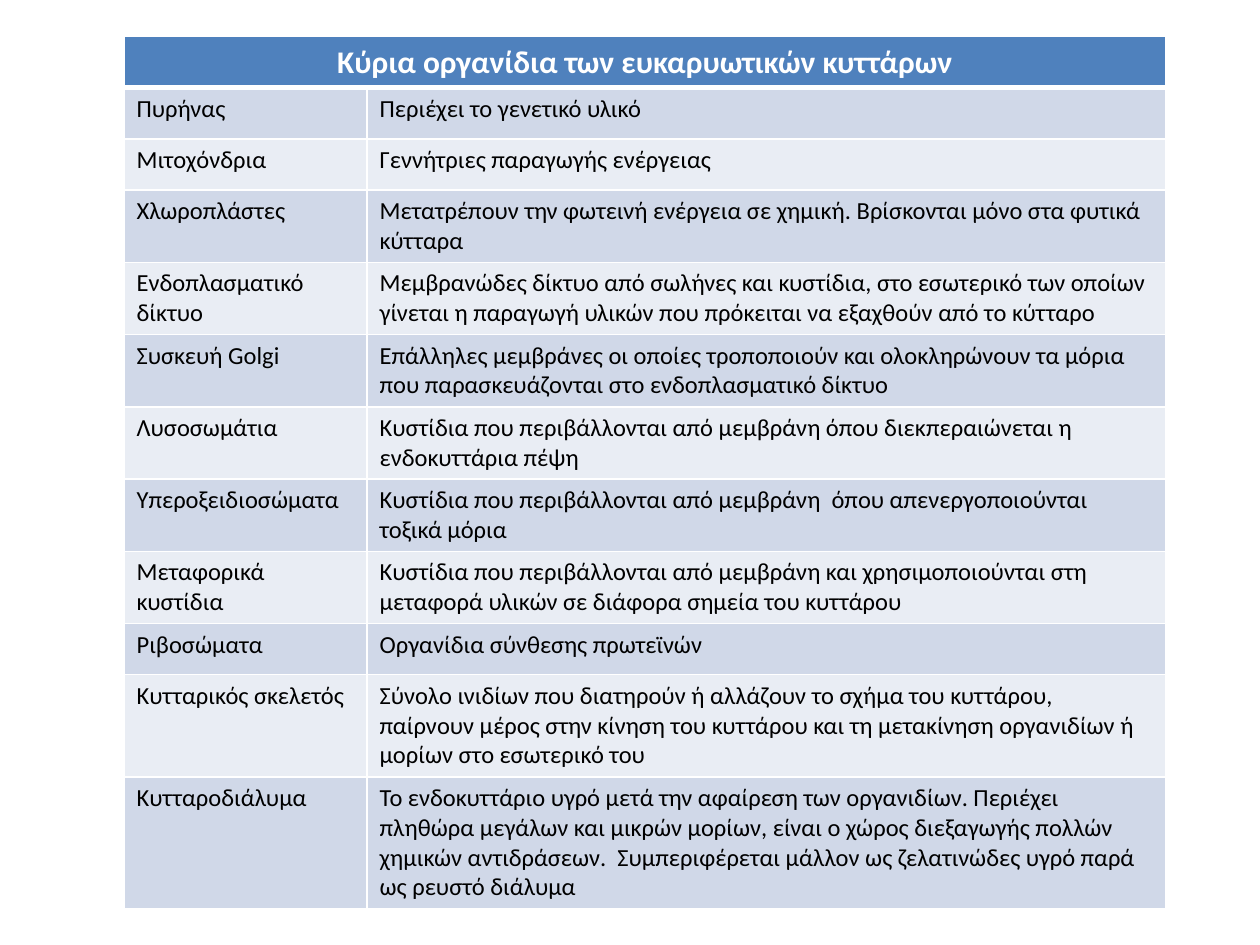
from dataclasses import dataclass

from lxml.etree import SubElement
from pptx import Presentation
from pptx.dml.color import RGBColor as Color
from pptx.enum.text import MSO_ANCHOR as Anchor, PP_ALIGN as Align
from pptx.oxml.ns import qn
from pptx.util import Cm, Pt


@dataclass(frozen=True)
class Theme:
    font: str = "Calibri"
    header_size: int = 18
    body_size: int = 14
    header_fill: str = "4F81BD"
    bands: tuple = ("D0D8E8", "E9EDF4")
    white: str = "FFFFFF"
    black: str = "000000"
    thin_line: int = 1
    thick_line: int = 3


THEME = Theme()
HEADING = "Κύρια οργανίδια των ευκαρυωτικών κυττάρων"
ORGANELLES = [
    ("Πυρήνας", "Περιέχει το γενετικό υλικό"),
    ("Μιτοχόνδρια", "Γεννήτριες παραγωγής ενέργειας"),
    ("Χλωροπλάστες",
     "Μετατρέπουν την φωτεινή ενέργεια σε χημική. Βρίσκονται μόνο στα φυτικά κύτταρα"),
    ("Ενδοπλασματικό δίκτυο",
     "Μεμβρανώδες δίκτυο από σωλήνες και κυστίδια, στο εσωτερικό των οποίων "
     "γίνεται η παραγωγή υλικών που πρόκειται να εξαχθούν από το κύτταρο"),
    ("Συσκευή Golgi",
     "Επάλληλες μεμβράνες οι οποίες τροποποιούν και ολοκληρώνουν τα μόρια "
     "που παρασκευάζονται στο ενδοπλασματικό δίκτυο"),
    ("Λυσοσωμάτια",
     "Κυστίδια που περιβάλλονται από μεμβράνη όπου διεκπεραιώνεται η ενδοκυττάρια πέψη"),
    ("Υπεροξειδιοσώματα",
     "Κυστίδια που περιβάλλονται από μεμβράνη  όπου απενεργοποιούνται τοξικά μόρια"),
    ("Μεταφορικά κυστίδια",
     "Κυστίδια που περιβάλλονται από μεμβράνη και χρησιμοποιούνται στη "
     "μεταφορά υλικών σε διάφορα σημεία του κυττάρου"),
    ("Ριβοσώματα", "Οργανίδια σύνθεσης πρωτεϊνών"),
    ("Κυτταρικός σκελετός",
     "Σύνολο ινιδίων που διατηρούν ή αλλάζουν το σχήμα του κυττάρου, "
     "παίρνουν μέρος στην κίνηση του κυττάρου και τη μετακίνηση οργανιδίων ή "
     "μορίων στο εσωτερικό του"),
    ("Κυτταροδιάλυμα",
     "Το ενδοκυττάριο υγρό μετά την αφαίρεση των οργανιδίων. Περιέχει "
     "πληθώρα μεγάλων και μικρών μορίων, είναι ο χώρος διεξαγωγής πολλών "
     "χημικών αντιδράσεων.  Συμπεριφέρεται μάλλον ως ζελατινώδες υγρό παρά "
     "ως ρευστό διάλυμα"),
]


def set_borders(cell, widths):
    properties = cell._tc.get_or_add_tcPr()
    for side in "LRTB":
        width = widths.get(side, THEME.thin_line)
        line = SubElement(properties, qn(f"a:ln{side}"), w=str(Pt(width)))
        fill = SubElement(line, qn("a:solidFill"))
        SubElement(fill, qn("a:srgbClr"), val=THEME.white)


def format_cell(cell, text, fill, color, size, bold=False, align=Align.LEFT, borders={}):
    set_borders(cell, borders)
    cell.fill.solid()
    cell.fill.fore_color.rgb = Color.from_string(fill)
    cell.vertical_anchor = Anchor.TOP
    cell.text = text
    paragraph = cell.text_frame.paragraphs[0]
    paragraph.alignment = align
    for run in paragraph.runs:
        for name, value in {"name": THEME.font, "size": Pt(size), "bold": bold}.items():
            setattr(run.font, name, value)
        run.font.color.rgb = Color.from_string(color)


def add_organelle_table(slide, left, top, width, row_height, name_share):
    row_count = len(ORGANELLES) + 1
    table = slide.shapes.add_table(
        row_count, 2, left, top, width, row_height * row_count).table
    table.columns[0].width = int(width * name_share)
    table.columns[1].width = width - table.columns[0].width

    header = table.cell(0, 0)
    header.merge(table.cell(0, 1))
    format_cell(header, HEADING, THEME.header_fill, THEME.white, THEME.header_size,
                bold=True, align=Align.CENTER, borders={"B": THEME.thick_line})
    set_borders(table.cell(0, 1), {"B": THEME.thick_line})

    for row, texts in enumerate(ORGANELLES, start=1):
        borders = {"T": THEME.thick_line} if row == 1 else {}
        for column, text in enumerate(texts):
            format_cell(table.cell(row, column), text, THEME.bands[(row - 1) % 2],
                        THEME.black, THEME.body_size, borders=borders)


def main():
    presentation = Presentation()
    presentation.slide_width, presentation.slide_height = Cm(25.4), Cm(19.05)
    slide = presentation.slides.add_slide(presentation.slide_layouts[6])
    add_organelle_table(slide, Cm(2.5), Cm(0.74), Cm(21), Cm(1.03), 7 / 30)
    presentation.save("out.pptx")


if __name__ == "__main__":
    main()
